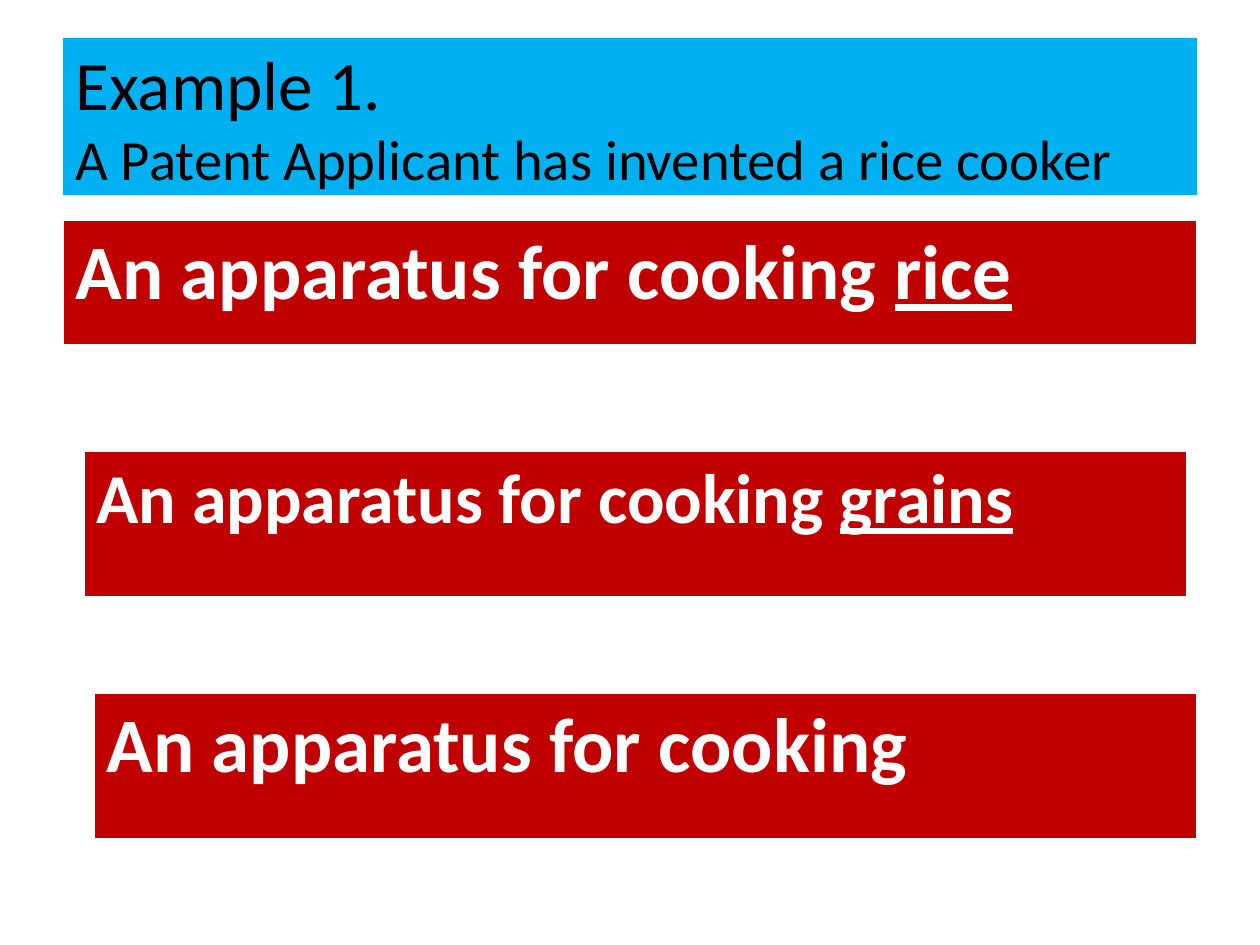
from lxml import etree
from pptx import Presentation
from pptx import util as u
from pptx.dml.color import RGBColor
from pptx.enum import shapes, text
from pptx.oxml.ns import qn

COLORS = {"title": "00B0F0", "claim": "C00000", "dark": "000000", "light": "FFFFFF"}
FONT = "Calibri"
TITLE_BOX = (63, 38, 1134, 157)
TITLE_LINES = [
    ("Example 1.", {"size": u.Pt(39.6)}),
    ("A Patent Applicant has invented a rice cooker", {"size": u.Pt(32.4)}),
]
CLAIMS = [
    ((63, 220, 1134, 126), 44, "An apparatus for cooking ", "rice"),
    ((84, 451, 1103, 147), 40, "An apparatus for cooking ", "grains"),
    ((94, 693, 1103, 147), 44, "An apparatus for cooking", ""),
]
BORDERS = {"a:lnL": 1, "a:lnR": 1, "a:lnT": 1, "a:lnB": 3}


def px(length):
    return round(length * 914400 / 126)


def paint(fill, color):
    fill.solid()
    fill.fore_color.rgb = RGBColor.from_string(COLORS[color])


def add_span(para, words, color, formats):
    span = para.add_run()
    span.text = words
    span.font.color.rgb = RGBColor.from_string(COLORS[color])
    for name, value in {"name": FONT, **formats}.items():
        setattr(span.font, name, value)


def add_title(page):
    box = page.shapes.add_shape(shapes.MSO_SHAPE.RECTANGLE, *map(px, TITLE_BOX))
    box.shadow.inherit = False
    box.line.fill.background()
    paint(box.fill, "title")
    box.text_frame.word_wrap = True
    box.text_frame.vertical_anchor = text.MSO_ANCHOR.MIDDLE
    para = box.text_frame.paragraphs[0]
    para.alignment = text.PP_ALIGN.LEFT
    for index, (words, formats) in enumerate(TITLE_LINES):
        if index:
            para.add_line_break()
        add_span(para, words, "dark", formats)


def add_borders(cell):
    properties = cell._tc.get_or_add_tcPr()
    for index, (tag, width) in enumerate(BORDERS.items()):
        line = etree.Element(qn(tag), w=str(u.Pt(width)))
        fill = etree.SubElement(line, qn("a:solidFill"))
        etree.SubElement(fill, qn("a:srgbClr"), val=COLORS["light"])
        properties.insert(index, line)


def add_claim(page, place, size, words, underlined):
    cell = page.shapes.add_table(1, 1, *map(px, place)).table.cell(0, 0)
    paint(cell.fill, "claim")
    add_borders(cell)
    para = cell.text_frame.paragraphs[0]
    formats = {"size": u.Pt(size), "bold": True}
    add_span(para, words, "light", formats)
    if underlined:
        add_span(para, underlined, "light", {**formats, "underline": True})


def main():
    deck = Presentation()
    deck.slide_width, deck.slide_height = px(1260), px(945)
    page = deck.slides.add_slide(deck.slide_layouts[6])
    add_title(page)
    for claim in CLAIMS:
        add_claim(page, *claim)
    deck.save("out.pptx")


if __name__ == "__main__":
    main()
